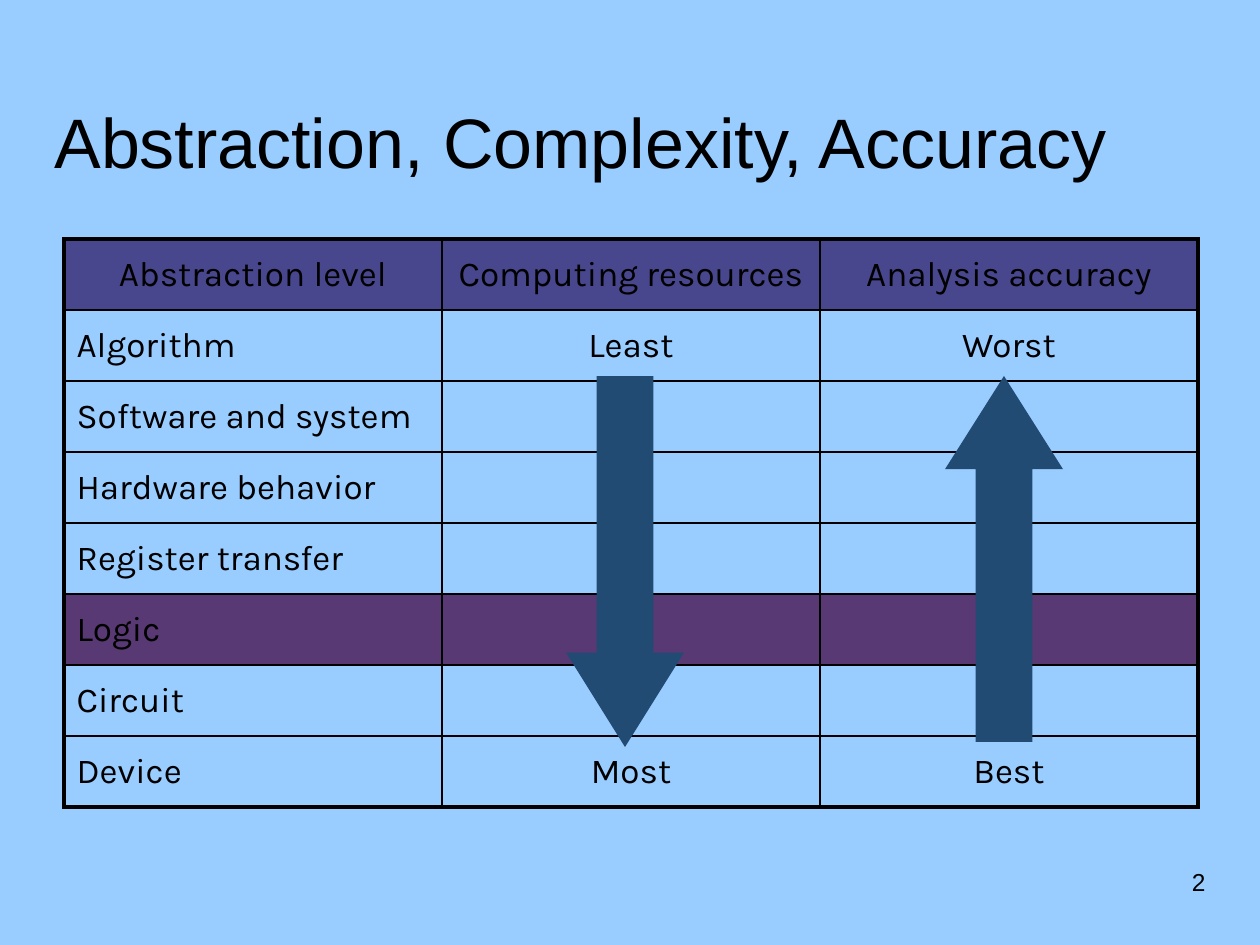
import pptx
import pptx.dml.color
import pptx.enum.shapes
import pptx.enum.text
import pptx.oxml
import pptx.oxml.ns
import pptx.util
from dataclasses import dataclass
from typing import Any, NamedTuple

SHAPE = pptx.enum.shapes.MSO_SHAPE
ALIGN = pptx.enum.text.PP_ALIGN
ANCHOR = pptx.enum.text.MSO_ANCHOR
SCALE = 914400 / 126


@dataclass(frozen=True)
class Theme:
    back: str = "99CCFF"
    ink: str = "000000"
    head: str = "48468C"
    mark: str = "583973"
    arrow: str = "224B73"
    sans: str = "Arial"
    body: str = "Karla"
    title: int = 40
    cell: int = 20
    page: int = 14
    thin: float = 1
    thick: float = 2.25


class Box(NamedTuple):
    left: int
    top: int
    width: int
    height: int


@dataclass(frozen=True)
class Label:
    text: str
    box: Box
    size: int
    align: Any
    anchor: Any


@dataclass(frozen=True)
class Arrow:
    kind: Any
    box: Box
    shaft: float
    tip: float


@dataclass(frozen=True)
class Row:
    level: str
    cost: str = ""
    merit: str = ""
    fill: str = ""


THEME = Theme()
GRID = Box(64, 239, 378, 71)
LABELS = [
    Label("2", Box(903, 861, 315, 66), THEME.page, ALIGN.RIGHT, ANCHOR.TOP),
    Label("Abstraction, Complexity, Accuracy", Box(42, 32, 1176, 157),
          THEME.title, ALIGN.LEFT, ANCHOR.BOTTOM),
]
ROWS = [
    Row("Abstraction level", "Computing resources", "Analysis accuracy", THEME.head),
    Row("Algorithm", "Least", "Worst"),
    Row("Software and system"),
    Row("Hardware behavior"),
    Row("Register transfer"),
    Row("Logic", fill=THEME.mark),
    Row("Circuit"),
    Row("Device", "Most", "Best"),
]
ARROWS = [
    Arrow(SHAPE.DOWN_ARROW, Box(566, 376, 118, 371), 0.48, 0.8),
    Arrow(SHAPE.UP_ARROW, Box(945, 376, 118, 366), 0.48, 0.79),
]


def px(count: int) -> int:
    return round(count * SCALE)


def place(box: Box) -> list[int]:
    return [px(side) for side in box]


def paint(fill: Any, tint: str) -> None:
    fill.solid()
    fill.fore_color.rgb = pptx.dml.color.RGBColor.from_string(tint)


def write(frame: Any, text: str, face: str, size: int, align: Any) -> None:
    para = frame.paragraphs[0]
    para.alignment = align
    run = para.add_run()
    run.text = text
    run.font.name = face
    run.font.size = pptx.util.Pt(size)
    run.font.bold = False
    run.font.color.rgb = pptx.dml.color.RGBColor.from_string(THEME.ink)


def add_label(slide: Any, label: Label) -> None:
    frame = slide.shapes.add_textbox(*place(label.box)).text_frame
    frame.word_wrap = True
    frame.vertical_anchor = label.anchor
    write(frame, label.text, THEME.sans, label.size, label.align)


def edge(cell: Any, side: str, outer: bool) -> None:
    width = pptx.util.Pt(THEME.thick if outer else THEME.thin)
    space = pptx.oxml.ns.nsdecls("a")
    cell._tc.get_or_add_tcPr().append(pptx.oxml.parse_xml(
        f'<a:ln{side} {space} w="{width}"><a:solidFill>'
        f'<a:srgbClr val="{THEME.ink}"/></a:solidFill></a:ln{side}>'))


def add_grid(slide: Any, rows: list[Row]) -> None:
    area = Box(GRID.left, GRID.top, GRID.width * 3, GRID.height * len(rows))
    table = slide.shapes.add_table(len(rows), 3, *place(area)).table
    table.first_row = table.horz_banding = False
    last = len(rows) - 1
    for y, row in enumerate(rows):
        table.rows[y].height = px(GRID.height)
        for x, text in enumerate((row.level, row.cost, row.merit)):
            cell = table.cell(y, x)
            cell.vertical_anchor = ANCHOR.MIDDLE
            for side, outer in (("L", x == 0), ("R", x == 2),
                                ("T", y == 0), ("B", y == last)):
                edge(cell, side, outer)
            if row.fill:
                paint(cell.fill, row.fill)
            else:
                cell.fill.background()
            if text:
                left = x == 0 and y > 0
                write(cell.text_frame, text, THEME.body, THEME.cell,
                      ALIGN.LEFT if left else ALIGN.CENTER)


def add_arrow(slide: Any, arrow: Arrow) -> None:
    shape = slide.shapes.add_shape(arrow.kind, *place(arrow.box))
    shape.adjustments[0] = arrow.shaft
    shape.adjustments[1] = arrow.tip
    shape.shadow.inherit = False
    paint(shape.fill, THEME.arrow)
    shape.line.fill.background()


def main() -> None:
    deck = pptx.Presentation()
    deck.slide_width, deck.slide_height = px(1260), px(945)
    slide = deck.slides.add_slide(deck.slide_layouts[6])
    paint(slide.background.fill, THEME.back)
    for label in LABELS:
        add_label(slide, label)
    add_grid(slide, ROWS)
    for arrow in ARROWS:
        add_arrow(slide, arrow)
    deck.save("out.pptx")


if __name__ == "__main__":
    main()
